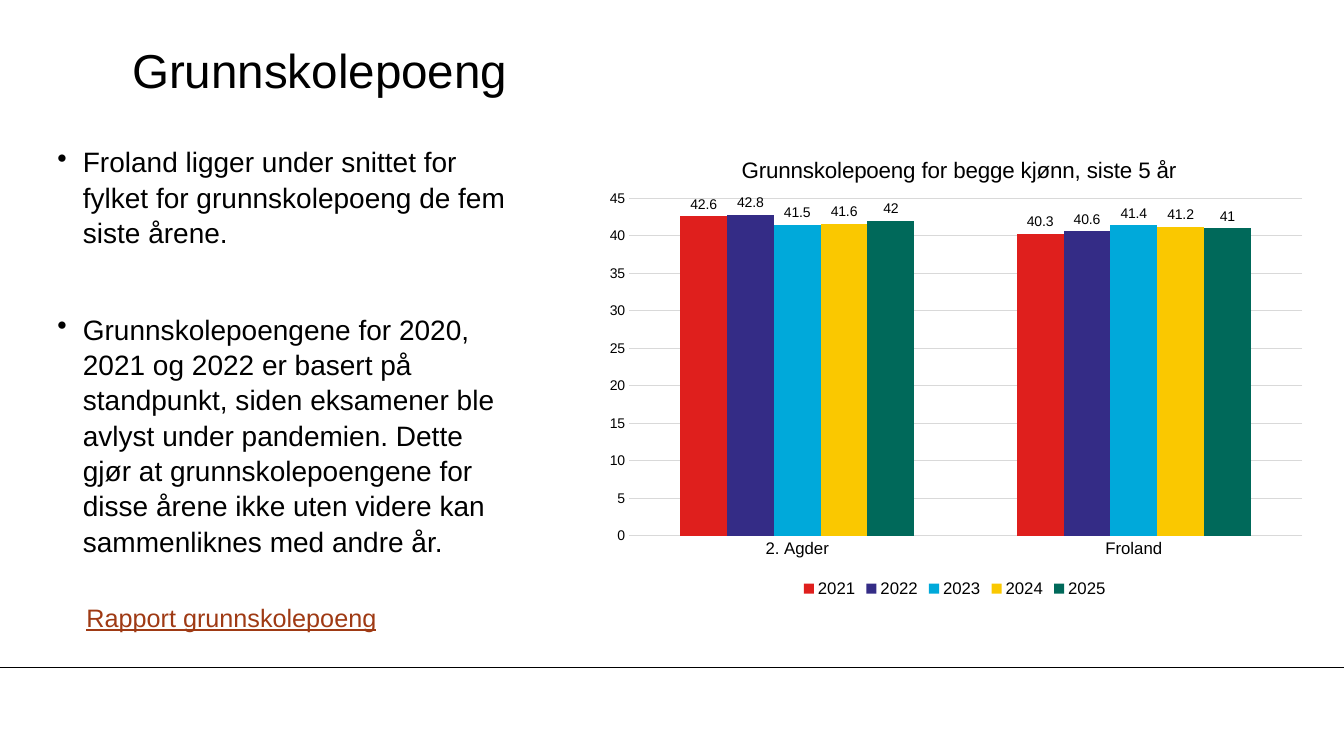
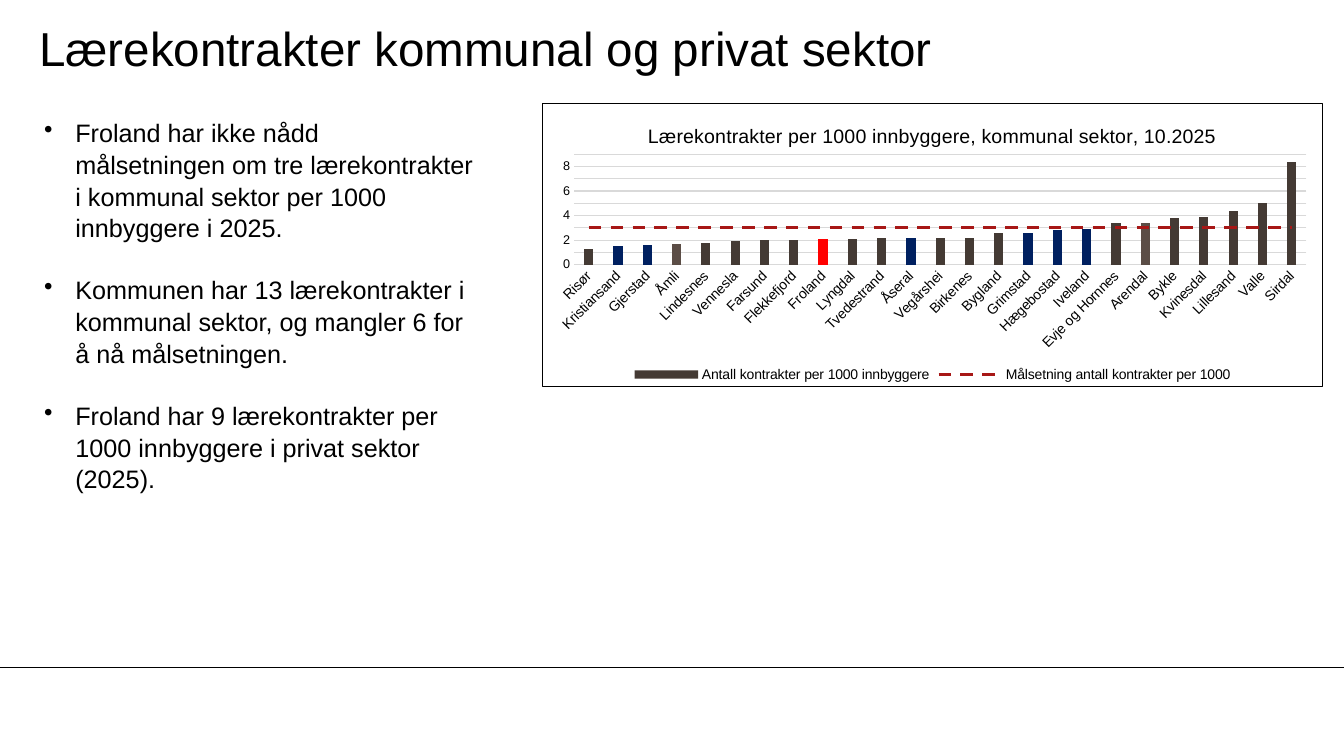
from dataclasses import dataclass
from typing import Optional

from lxml import etree
from pptx import Presentation
from pptx.chart.data import CategoryChartData
from pptx.dml.color import RGBColor
from pptx.enum.chart import XL_CHART_TYPE as ChartType
from pptx.enum.chart import XL_LABEL_POSITION as LabelPosition
from pptx.enum.chart import XL_LEGEND_POSITION as LegendPosition
from pptx.enum.chart import XL_TICK_MARK as TickMark
from pptx.enum.dml import MSO_LINE_DASH_STYLE as Dash
from pptx.enum.text import MSO_ANCHOR as Anchor
from pptx.oxml import parse_xml
from pptx.oxml.ns import nsdecls, qn
from pptx.util import Cm, Pt


# Theme
@dataclass(frozen=True)
class Theme:
    font: str = "Arial"
    text: str = "000000"
    link: str = "9F3A14"
    grid: str = "D9D9D9"
    years: tuple[str, ...] = ("DF1F1D", "342C86", "00A9DA", "FAC800", "00695A")
    bar: str = "443A34"
    bar_light: str = "5B4D46"
    bar_blue: str = "002060"
    bar_own: str = "FF0000"
    target: str = "A71716"
    title_size: float = 34
    large_size: float = 20
    body_size: float = 18
    small_size: float = 10
    thin: float = 0.75
    line_spacing: float = 1.05


THEME = Theme()


@dataclass(frozen=True)
class Area:
    """A place on the page, in centimetres."""
    left: float
    top: float
    width: float
    height: float

    def lengths(self) -> tuple[Cm, Cm, Cm, Cm]:
        return Cm(self.left), Cm(self.top), Cm(self.width), Cm(self.height)


@dataclass(frozen=True)
class ChartStyle:
    """Type sizes, and positions as fractions of the chart."""
    title: str
    title_size: float
    title_at: tuple[float, float]
    plot_at: tuple[float, float, float, float]
    category_size: float
    value_size: float
    legend_size: float
    maximum: float
    unit: float
    overlap: int = 0
    border: Optional[str] = None
    number_format: str = "General"
    rotation: int = 0


PAGE_WIDTH, PAGE_HEIGHT = 33.87, 19.05
FOOTER_TOP = 16.81


def color(code: str) -> RGBColor:
    return RGBColor.from_string(code)


def set_font(font, size: float, code: str = THEME.text, underline: bool = False) -> None:
    font.name = THEME.font
    font.size = Pt(size)
    font.bold = False
    font.color.rgb = color(code)
    if underline:
        font.underline = True


# Text
def add_text(page, area: Area, paragraphs: list[str], *, size: float,
             code: str = THEME.text, underline: bool = False, middle: bool = False,
             inset: tuple[float, float] = (0, 0), indent: float = 0,
             gap: float = 0, spacing: float = 1) -> None:
    frame = page.shapes.add_textbox(*area.lengths()).text_frame
    frame.word_wrap = True
    frame.vertical_anchor = Anchor.MIDDLE if middle else Anchor.TOP
    frame.margin_left = frame.margin_right = Cm(inset[0])
    frame.margin_top = frame.margin_bottom = Cm(inset[1])
    for index, text in enumerate(paragraphs):
        para = frame.paragraphs[0] if index == 0 else frame.add_paragraph()
        para.line_spacing = spacing
        if index:
            para.space_before = Pt(gap)
        if indent:
            properties = para._p.get_or_add_pPr()
            properties.set("marL", str(Cm(indent)))
            properties.set("indent", str(-Cm(indent)))
            bullet = etree.SubElement(properties, qn("a:buChar"))
            bullet.set("char", "•")
        span = para.add_run()
        span.text = text
        set_font(span.font, size, code, underline)


# Shared page parts
def add_page(deck, title: str, title_area: Area):
    page = deck.slides.add_slide(deck.slide_layouts[6])
    rule = page.shapes.add_connector(1, 0, Cm(FOOTER_TOP), Cm(PAGE_WIDTH), Cm(FOOTER_TOP))
    rule.line.color.rgb = color(THEME.text)
    rule.line.width = Pt(THEME.thin)
    etree.SubElement(rule._element.spPr, qn("a:effectLst"))
    add_text(page, title_area, [title], size=THEME.title_size, middle=True)
    return page


# Charts
def layout_xml(x: float, y: float, size: Optional[tuple[float, float]] = None):
    values = {"xMode": "edge", "yMode": "edge", "x": x, "y": y}
    if size:
        values = {"layoutTarget": "inner", **values, "w": size[0], "h": size[1]}
    parts = "".join(f'<c:{name} val="{value}"/>' for name, value in values.items())
    return parse_xml(f'<c:layout {nsdecls("c")}><c:manualLayout>{parts}'
                     f'</c:manualLayout></c:layout>')


def set_layout(parent, layout, after: Optional[str] = None) -> None:
    for old in parent.findall(qn("c:layout")):
        parent.remove(old)
    if after:
        parent.find(qn(after)).addnext(layout)
    else:
        parent.insert(0, layout)


def set_border(chart, code: Optional[str]) -> None:
    paint = f'<a:solidFill><a:srgbClr val="{code}"/></a:solidFill>' if code else "<a:noFill/>"
    properties = parse_xml(f'<c:spPr {nsdecls("c", "a")}><a:noFill/>'
                           f'<a:ln w="{Pt(THEME.thin)}">{paint}</a:ln></c:spPr>')
    chart._chartSpace.find(qn("c:chart")).addnext(properties)


def style_line(line, code: str) -> None:
    line.color.rgb = color(code)
    line.width = Pt(THEME.thin)


def add_columns(page, area: Area, categories: list[str],
                series: dict[str, list[float]], style: ChartStyle):
    data = CategoryChartData(number_format="General")
    data.categories = categories
    for name, values in series.items():
        data.add_series(name, values)
    chart = page.shapes.add_chart(ChartType.COLUMN_CLUSTERED, *area.lengths(), data).chart
    set_font(chart.font, THEME.small_size)
    set_border(chart, style.border)

    # Title
    chart.has_title = True
    span = chart.chart_title.text_frame.paragraphs[0].add_run()
    span.text = style.title
    set_font(span.font, style.title_size)
    set_layout(chart.chart_title._element, layout_xml(*style.title_at), "c:tx")

    # Legend
    chart.has_legend = True
    chart.legend.position = LegendPosition.BOTTOM
    chart.legend.include_in_layout = False
    set_font(chart.legend.font, style.legend_size)

    # Axes
    category, value = chart.category_axis, chart.value_axis
    for axis, size in ((category, style.category_size), (value, style.value_size)):
        axis.major_tick_mark = axis.minor_tick_mark = TickMark.NONE
        set_font(axis.tick_labels.font, size)
    style_line(category.format.line, THEME.grid)
    if style.rotation:
        body = category._element.find(qn("c:txPr")).find(qn("a:bodyPr"))
        body.set("rot", str(style.rotation * 60000))
        body.set("vert", "horz")
    value.minimum_scale, value.maximum_scale = 0, style.maximum
    value.major_unit = style.unit
    value.tick_labels.number_format = style.number_format
    value.tick_labels.number_format_is_linked = False
    value.format.line.fill.background()
    value.has_major_gridlines = True
    style_line(value.major_gridlines.format.line, THEME.grid)

    # Columns
    plot = chart.plots[0]
    plot.vary_by_categories = False
    plot.gap_width, plot.overlap = 219, style.overlap
    x, y, width, height = style.plot_at
    set_layout(chart._chartSpace.find(qn("c:chart")).find(qn("c:plotArea")),
               layout_xml(x, y, (width, height)))
    return chart


def fill_with(target, code: str) -> None:
    target.format.fill.solid()
    target.format.fill.fore_color.rgb = color(code)


def turn_into_target_line(chart, series) -> None:
    """Move a column series to a dashed line on the same axes."""
    line = series.format.line
    line.color.rgb = color(THEME.target)
    line.width = Pt(2.25)
    line.dash_style = Dash.DASH
    element, columns = series._element, chart.plots[0]._element
    for column_only in element.findall(qn("c:invertIfNegative")):
        element.remove(column_only)
    element.find(qn("c:spPr")).addnext(
        parse_xml(f'<c:marker {nsdecls("c")}><c:symbol val="none"/></c:marker>'))
    etree.SubElement(element, qn("c:smooth")).set("val", "0")
    axes = "".join(f'<c:axId val="{axis.get("val")}"/>'
                   for axis in columns.findall(qn("c:axId")))
    lines = parse_xml(f'<c:lineChart {nsdecls("c")}><c:grouping val="standard"/>'
                      f'<c:varyColors val="0"/><c:marker val="1"/>{axes}</c:lineChart>')
    lines.insert(2, element)
    columns.addnext(lines)


# Pages
def add_points_page(deck) -> None:
    page = add_page(deck, "Grunnskolepoeng", Area(3.33, 0.81, 28.19, 1.9))
    add_text(page, Area(1.45, 3.61, 11.63, 10.92), [
        "Froland ligger under snittet for fylket for grunnskolepoeng de fem siste årene.",
        "Grunnskolepoengene for 2020, 2021 og 2022 er basert på standpunkt, siden eksamener "
        "ble avlyst under pandemien. Dette gjør at grunnskolepoengene for disse årene ikke "
        "uten videre kan sammenliknes med andre år.",
    ], size=THEME.large_size, indent=0.64, gap=44, spacing=THEME.line_spacing)
    add_text(page, Area(1.93, 15.04, 8.38, 1.02), ["Rapport grunnskolepoeng"],
             size=THEME.body_size, code=THEME.link, underline=True, inset=(0.25, 0.13))
    chart = add_columns(
        page, Area(14.94, 3.35, 18.24, 11.81), ["2. Agder", "Froland"],
        {"2021": [42.6, 40.3], "2022": [42.8, 40.6], "2023": [41.5, 41.4],
         "2024": [41.6, 41.2], "2025": [42, 41]},
        ChartStyle("Grunnskolepoeng for begge kjønn, siste 5 år", 16, (0.2, 0.04),
                   (0.05, 0.14, 0.93, 0.72), category_size=12, value_size=10,
                   legend_size=12, maximum=45, unit=5))
    for series, code in zip(chart.plots[0].series, THEME.years):
        fill_with(series, code)
        labels = series.data_labels
        labels.show_value = True
        labels.position = LabelPosition.OUTSIDE_END
        set_font(labels.font, THEME.small_size)


def add_contracts_page(deck) -> None:
    page = add_page(deck, "Lærekontrakter kommunal og privat sektor",
                    Area(0.99, 0.25, 28.19, 1.9))
    add_text(page, Area(0.86, 2.79, 11.38, 10.26), [
        "Froland har ikke nådd målsetningen om tre lærekontrakter i kommunal sektor "
        "per 1000 innbyggere i 2025.",
        "Kommunen har 13 lærekontrakter i kommunal sektor, og mangler 6 for å nå målsetningen.",
        "Froland har 9 lærekontrakter per 1000 innbyggere i privat sektor (2025).",
    ], size=THEME.body_size, inset=(0.25, 0.13), indent=0.79, gap=21.6,
        spacing=THEME.line_spacing)
    contracts = {
        "Risør": 1.3, "Kristiansand": 1.5, "Gjerstad": 1.6, "Åmli": 1.7, "Lindesnes": 1.8,
        "Vennesla": 1.9, "Farsund": 2, "Flekkefjord": 2, "Froland": 2.1, "Lyngdal": 2.1,
        "Tvedestrand": 2.2, "Åseral": 2.2, "Vegårshei": 2.2, "Birkenes": 2.2,
        "Bygland": 2.6, "Grimstad": 2.6, "Hægebostad": 2.8, "Iveland": 2.9,
        "Evje og Hornnes": 3.4, "Arendal": 3.4, "Bykle": 3.8, "Kvinesdal": 3.9,
        "Lillesand": 4.4, "Valle": 5, "Sirdal": 8.4}
    highlights = {
        THEME.bar_blue: ("Kristiansand", "Gjerstad", "Åseral", "Grimstad", "Hægebostad",
                         "Iveland"),
        THEME.bar_light: ("Åmli", "Arendal"),
        THEME.bar_own: ("Froland",)}
    towns = list(contracts)
    chart = add_columns(
        page, Area(13.67, 2.59, 19.66, 7.16), towns,
        {"Antall kontrakter per 1000 innbyggere": list(contracts.values()),
         "Målsetning antall kontrakter per 1000": [3] * len(towns)},
        ChartStyle("Lærekontrakter per 1000 innbyggere, kommunal sektor, 10.2025", 14,
                   (0.13, 0.06), (0.04, 0.18, 0.94, 0.39), category_size=10, value_size=9,
                   legend_size=10, maximum=9, unit=1, overlap=-27, border=THEME.text,
                   number_format="0", rotation=-45))
    columns, target = chart.plots[0].series
    fill_with(columns, THEME.bar)
    for code, names in highlights.items():
        for name in names:
            fill_with(columns.points[towns.index(name)], code)
    turn_into_target_line(chart, target)


def main() -> None:
    deck = Presentation()
    deck.slide_width, deck.slide_height = Cm(PAGE_WIDTH), Cm(PAGE_HEIGHT)
    add_points_page(deck)
    add_contracts_page(deck)
    deck.save("out.pptx")


if __name__ == "__main__":
    main()
